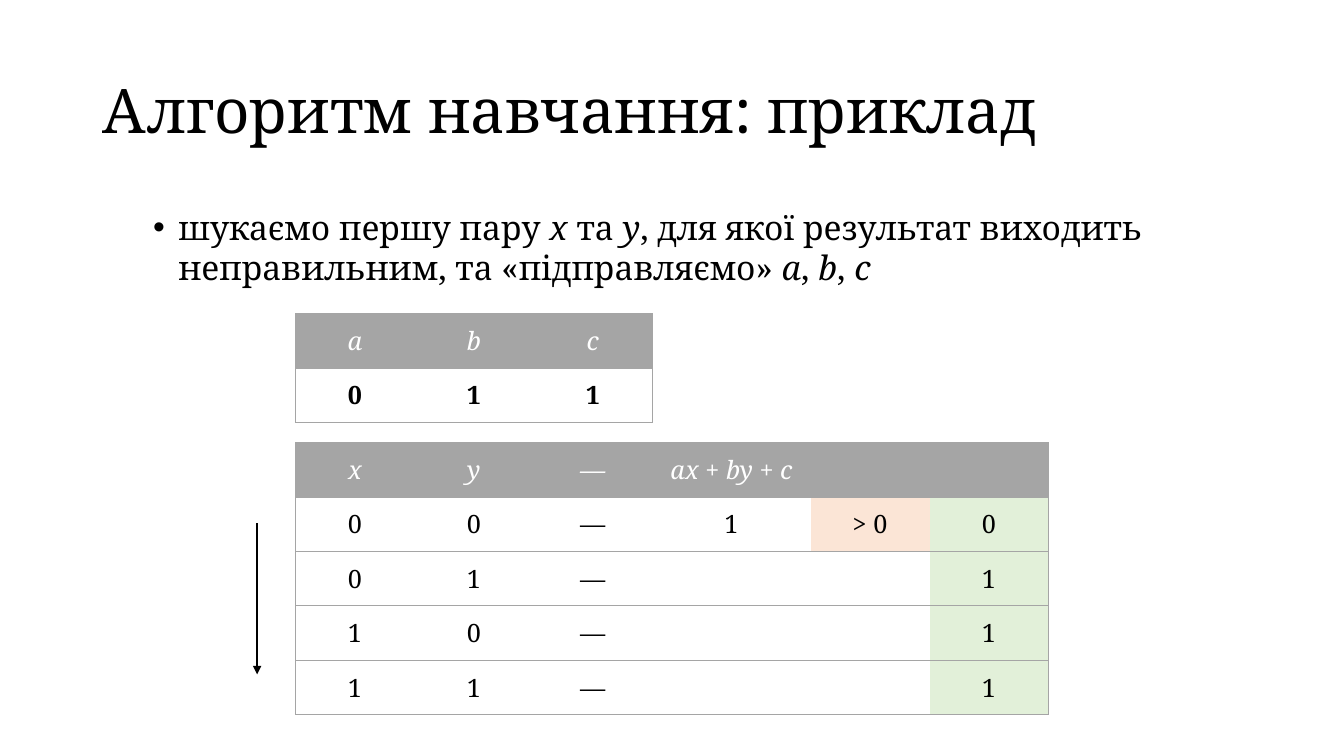
import dataclasses
import typing

import lxml.etree
import pptx
import pptx.dml.color
import pptx.enum.shapes
import pptx.enum.text
import pptx.oxml.ns
import pptx.util

FONT = "Noto Serif"
COLORS = {
    "text": "000000",
    "header": "A5A5A5",
    "header_text": "FFFFFF",
    "sign": "FBE5D6",
    "target": "E2F0D9",
}
COLUMN, WIDE_COLUMN, ROW = 1.18, 1.57, 0.54
TABLE_LEFT = 2.93


@dataclasses.dataclass
class TableData:
    top: float
    columns: list[float]
    header: list[str]
    rows: list[list[str]]
    bold: bool = False
    fills: dict[tuple[int, int], str] = dataclasses.field(default_factory=dict)


WEIGHTS = TableData(3.11, [COLUMN] * 3, ["*a*", "*b*", "*c*"], [["0", "1", "1"]], bold=True)
SAMPLES = TableData(
    4.39,
    [COLUMN] * 3 + [WIDE_COLUMN] + [COLUMN] * 2,
    ["*x*", "*y*", "*—*", "*ax* + *by* + *c*", "", ""],
    [
        ["0", "0", "—", "1", "> 0", "0"],
        ["0", "1", "—", "", "", "1"],
        ["1", "0", "—", "", "", "1"],
        ["1", "1", "—", "", "", "1"],
    ],
    fills={(1, 4): "sign"} | {(row, 5): "target" for row in range(1, 5)},
)


def rgb(name: str) -> pptx.dml.color.RGBColor:
    return pptx.dml.color.RGBColor.from_string(COLORS[name])


def add_element(parent: typing.Any, tag: str, **attributes: str) -> typing.Any:
    return lxml.etree.SubElement(parent, pptx.oxml.ns.qn(tag), attributes)


def write_text(frame: typing.Any, text: str, *, size: float, color: str = "text",
               bold: bool = False, align: str = "LEFT", spacing: float = 1.0) -> typing.Any:
    """Fill the frame with one paragraph; parts between asterisks are italic."""
    paragraph = frame.paragraphs[0]
    paragraph.alignment = getattr(pptx.enum.text.PP_ALIGN, align)
    paragraph.line_spacing = spacing
    for index, part in enumerate(text.split("*")):
        if part:
            run = paragraph.add_run()
            run.text = part
            run.font.name = FONT
            run.font.size = pptx.util.Pt(size)
            run.font.bold = bold
            run.font.italic = index % 2 == 1
            run.font.color.rgb = rgb(color)
    return paragraph


def set_borders(cell: typing.Any, visible: dict[str, bool]) -> None:
    properties = cell._tc.get_or_add_tcPr()
    for side, shown in visible.items():
        line = add_element(properties, f"a:ln{side}", w=str(pptx.util.Pt(0.5)))
        if shown:
            fill = add_element(line, "a:solidFill")
            add_element(fill, "a:srgbClr", val=COLORS["header"])
        else:
            add_element(line, "a:noFill")


def add_table(slide: typing.Any, data: TableData) -> None:
    contents = [data.header, *data.rows]
    frame = slide.shapes.add_table(
        len(contents), len(data.columns),
        pptx.util.Inches(TABLE_LEFT), pptx.util.Inches(data.top),
        pptx.util.Inches(sum(data.columns)), pptx.util.Inches(ROW * len(contents)))
    table = frame.table
    table.first_row = table.horz_banding = False
    for column, width in zip(table.columns, data.columns):
        column.width = pptx.util.Inches(width)
    last_column = len(data.columns) - 1
    for row_index, texts in enumerate(contents):
        table.rows[row_index].height = pptx.util.Inches(ROW)
        is_header = row_index == 0
        for column_index, text in enumerate(texts):
            cell = table.cell(row_index, column_index)
            cell.margin_left = cell.margin_right = pptx.util.Inches(0.1)
            cell.margin_top = cell.margin_bottom = pptx.util.Inches(0.1)
            write_text(cell.text_frame, text, size=18, align="CENTER",
                       color="header_text" if is_header else "text",
                       bold=data.bold and not is_header)
            set_borders(cell, {"L": column_index == 0, "R": column_index == last_column,
                               "T": True, "B": True})
            fill_name = "header" if is_header else data.fills.get((row_index, column_index))
            if fill_name:
                cell.fill.solid()
                cell.fill.fore_color.rgb = rgb(fill_name)
            else:
                cell.fill.background()


def add_title(slide: typing.Any, text: str) -> None:
    title = slide.shapes.title
    title.left, title.top = pptx.util.Inches(0.92), pptx.util.Inches(0.4)
    title.width, title.height = pptx.util.Inches(11.5), pptx.util.Inches(1.45)
    title.text_frame.vertical_anchor = pptx.enum.text.MSO_ANCHOR.MIDDLE
    write_text(title.text_frame, text, size=44, spacing=0.9)


def add_bullet(slide: typing.Any, text: str) -> None:
    box = slide.shapes.add_textbox(pptx.util.Inches(0.92), pptx.util.Inches(2),
                                   pptx.util.Inches(11.5), pptx.util.Inches(1.05))
    box.text_frame.word_wrap = True
    paragraph = write_text(box.text_frame, text, size=24)
    paragraph.space_before = pptx.util.Pt(2)
    properties = paragraph._p.get_or_add_pPr()
    properties.set("marL", str(pptx.util.Inches(0.75)))
    properties.set("indent", str(pptx.util.Inches(-0.25)))
    add_element(properties, "a:buFont", typeface="Arial")
    add_element(properties, "a:buChar", char="•")


def add_down_arrow(slide: typing.Any, x: float, top: float, bottom: float) -> None:
    arrow = slide.shapes.add_connector(
        pptx.enum.shapes.MSO_CONNECTOR.STRAIGHT,
        pptx.util.Inches(x), pptx.util.Inches(top),
        pptx.util.Inches(x), pptx.util.Inches(bottom))
    arrow.line.color.rgb = rgb("text")
    arrow.line.width = pptx.util.Pt(1)
    add_element(arrow.line._get_or_add_ln(), "a:tailEnd", type="triangle")
    add_element(arrow._element.spPr, "a:effectLst")


def main() -> None:
    presentation = pptx.Presentation()
    presentation.slide_width = pptx.util.Inches(13.33)
    presentation.slide_height = pptx.util.Inches(7.5)
    slide = presentation.slides.add_slide(presentation.slide_layouts[5])

    # Heading and explanation
    add_title(slide, "Алгоритм навчання: приклад")
    add_bullet(slide, "шукаємо першу пару *x* та *y*, для якої результат виходить "
                      "неправильним, та «підправляємо» *a*, *b*, *c*")

    # Search direction, samples and current weights
    add_down_arrow(slide, 2.55, 5.19, 6.69)
    add_table(slide, SAMPLES)
    add_table(slide, WEIGHTS)

    presentation.save("out.pptx")


if __name__ == "__main__":
    main()
